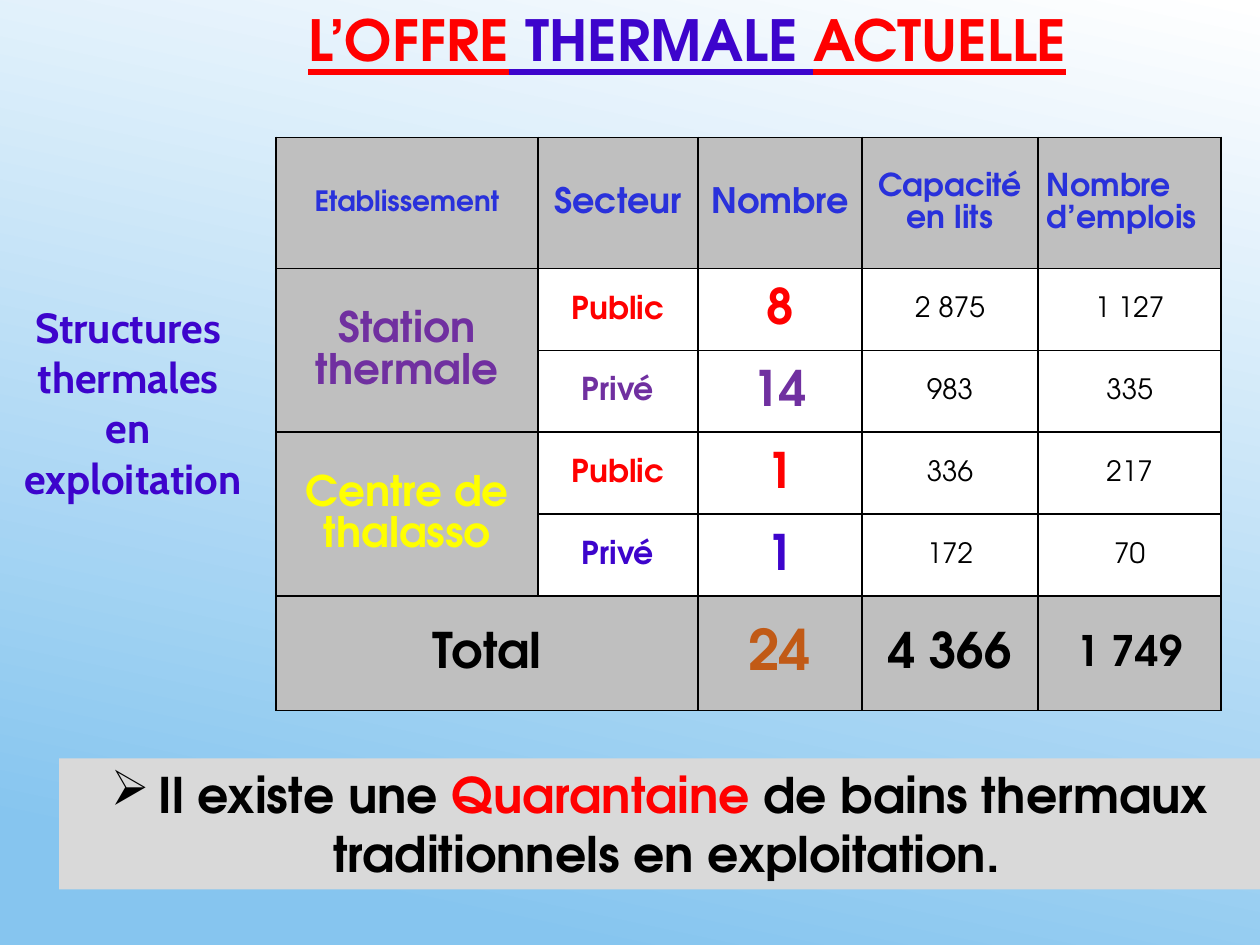
from dataclasses import dataclass

from lxml import etree
from pptx import Presentation
from pptx.dml.color import RGBColor
from pptx.enum.shapes import MSO_SHAPE
from pptx.enum.text import MSO_ANCHOR, MSO_AUTO_SIZE, PP_ALIGN
from pptx.oxml.ns import qn
from pptx.util import Inches, Pt

CENTER, LEFT = PP_ALIGN.CENTER, PP_ALIGN.LEFT
MIDDLE = MSO_ANCHOR.MIDDLE
NO_FIT = MSO_AUTO_SIZE.NONE
RECTANGLE = MSO_SHAPE.RECTANGLE


@dataclass(frozen=True)
class Theme:
    font: str = "TeX Gyre Adventor"
    side_font: str = "Cabin"
    red: str = "FF0000"
    indigo: str = "3D04CC"
    blue: str = "2931DB"
    purple: str = "7030A0"
    yellow: str = "FFFF00"
    orange: str = "C15A16"
    black: str = "000000"
    white: str = "FFFFFF"
    sky: str = "86C5EF"
    gray: str = "BFBFBF"
    pale_gray: str = "D9D9D9"
    title: float = 32.4
    grand: int = 32
    large: int = 28
    medium: int = 24
    header: int = 20
    small: int = 18
    body: int = 16


T = Theme()

COLUMNS = (2.08, 1.27, 1.3, 1.4, 1.45)
ROWS = (1.04, 0.65, 0.65, 0.65, 0.65, 0.91)

# Header and total cells: column, text, size, colour, alignment
HEADERS = (
    (0, "Etablissement", T.body, T.blue, CENTER),
    (1, "Secteur", T.header, T.blue, CENTER),
    (2, "Nombre", T.header, T.blue, CENTER),
    (3, "Capacité en lits", T.small, T.blue, CENTER),
    (4, "Nombre d’emplois", T.small, T.blue, LEFT),
)
TOTALS = (
    (0, "Total", T.large, T.black, CENTER),
    (2, "24", T.grand, T.orange, CENTER),
    (3, "4 366", T.large, T.black, CENTER),
    (4, "1 749", T.medium, T.black, CENTER),
)
# Establishment, its colour, then one line per sector
ESTABLISHMENTS = (
    ("Station thermale", T.purple, (
        ("Public", "8", "2 875", "1 127", T.red),
        ("Privé", "14", "983", "335", T.purple))),
    ("Centre de thalasso", T.yellow, (
        ("Public", "1", "336", "217", T.red),
        ("Privé", "1", "172", "70", T.indigo))),
)


def set_all(target, values):
    for name, value in values.items():
        setattr(target, name, value)


def add_run(paragraph, text, size, color, font=T.font, bold=True, underline=None):
    run = paragraph.add_run()
    run.text = text
    set_all(run.font, {"size": Pt(size), "name": font, "bold": bold, "underline": underline})
    run.font.color.rgb = RGBColor.from_string(color)


def fill_solid(target, color):
    target.fill.solid()
    target.fill.fore_color.rgb = RGBColor.from_string(color)


def paint_background(slide):
    fill = slide.background.fill
    fill.gradient()
    fill.gradient_angle = 360 - 102
    for stop, (position, color) in zip(fill.gradient_stops, ((0, T.white), (0.9, T.sky))):
        stop.position = position
        stop.color.rgb = RGBColor.from_string(color)


def write_title(slide):
    title = slide.shapes.title
    set_all(title, {"left": Inches(1.56), "top": 0,
                    "width": Inches(7.34), "height": Inches(0.61)})
    frame = title.text_frame
    set_all(frame, {"auto_size": NO_FIT, "vertical_anchor": MIDDLE,
                    "word_wrap": True, "margin_left": Inches(0.55)})
    heading = frame.paragraphs[0]
    heading.alignment = CENTER
    for text, color in (("L’OFFRE", T.red), (" THERMALE\u00a0", T.indigo), ("ACTUELLE", T.red)):
        add_run(heading, text, T.title, color, underline=True)


def add_side_label(slide, lines):
    label = slide.shapes.add_textbox(0, Inches(2.34), Inches(2.11), Inches(1.72))
    frame = label.text_frame
    frame.word_wrap = True
    for index, line in enumerate(lines):
        paragraph = frame.add_paragraph() if index else frame.paragraphs[0]
        paragraph.alignment = CENTER
        add_run(paragraph, line, T.medium, T.indigo, T.side_font)


def border_cell(cell):
    properties = cell._tc.get_or_add_tcPr()
    for index, side in enumerate(("a:lnL", "a:lnR", "a:lnT", "a:lnB")):
        line = etree.Element(qn(side), w=str(Pt(1)))
        solid = etree.SubElement(line, qn("a:solidFill"))
        etree.SubElement(solid, qn("a:srgbClr"), val=T.black)
        properties.insert(index, line)


def write_cell(cell, text, size, color, align=CENTER, bold=True):
    paragraph = cell.text_frame.paragraphs[0]
    set_all(paragraph, {"alignment": align, "line_spacing": 1.07})
    add_run(paragraph, text, size, color, bold=bold)


def add_offer_table(slide):
    table = slide.shapes.add_table(
        len(ROWS), len(COLUMNS), Inches(2.19), Inches(1.09),
        Inches(sum(COLUMNS)), Inches(sum(ROWS))).table
    set_all(table, {"first_row": False, "horz_banding": False})
    for column, width in zip(table.columns, COLUMNS):
        column.width = Inches(width)
    for row, height in zip(table.rows, ROWS):
        row.height = Inches(height)

    # Gray frame around the white figures
    last = len(ROWS) - 1
    for r in range(len(ROWS)):
        for c in range(len(COLUMNS)):
            cell = table.cell(r, c)
            set_all(cell, {"margin_left": Inches(0.07), "margin_right": Inches(0.07),
                           "margin_top": 0, "margin_bottom": 0, "vertical_anchor": MIDDLE})
            fill_solid(cell, T.gray if r in (0, last) or c == 0 else T.white)
            border_cell(cell)

    # Header and total rows
    table.cell(last, 0).merge(table.cell(last, 1))
    for r, entries in ((0, HEADERS), (last, TOTALS)):
        for c, *content in entries:
            write_cell(table.cell(r, c), *content)

    # Establishments, two sectors each
    for group, (name, color, sectors) in enumerate(ESTABLISHMENTS):
        top = 1 + 2 * group
        table.cell(top, 0).merge(table.cell(top + 1, 0))
        write_cell(table.cell(top, 0), name, T.medium, color)
        for r, (sector, count, beds, jobs, accent) in enumerate(sectors, top):
            write_cell(table.cell(r, 1), sector, T.small, accent)
            write_cell(table.cell(r, 2), count, T.large, accent)
            for c, figure in ((3, beds), (4, jobs)):
                write_cell(table.cell(r, c), figure, T.body, T.black, bold=False)


def add_note(slide, lines):
    note = slide.shapes.add_shape(RECTANGLE, Inches(0.47), Inches(6.02),
                                  Inches(9.53), Inches(1.04))
    note.shadow.inherit = False
    note.line.fill.background()
    fill_solid(note, T.pale_gray)
    frame = note.text_frame
    set_all(frame, {"word_wrap": True, "vertical_anchor": MSO_ANCHOR.TOP})
    for index, runs in enumerate(lines):
        paragraph = frame.add_paragraph() if index else frame.paragraphs[0]
        paragraph.alignment = CENTER
        properties = paragraph._p.get_or_add_pPr()
        properties.set("marL", str(Inches(0.38)))
        properties.set("indent", str(-Inches(0.38)))
        if index == 0:
            etree.SubElement(properties, qn("a:buChar"), char="➢")
        for text, color in runs:
            add_run(paragraph, text, T.large, color)


def main():
    deck = Presentation()
    set_all(deck, {"slide_width": Inches(10), "slide_height": Inches(7.5)})
    slide = deck.slides.add_slide(deck.slide_layouts[5])
    paint_background(slide)
    write_title(slide)
    add_side_label(slide, ("Structures ", "thermales ", "en ", "exploitation"))
    add_offer_table(slide)
    add_note(slide, (
        (("Il existe une ", T.black), ("Quarantaine ", T.red), ("de bains thermaux", T.black)),
        ((" traditionnels en exploitation.", T.black),)))
    deck.save("out.pptx")


if __name__ == "__main__":
    main()
